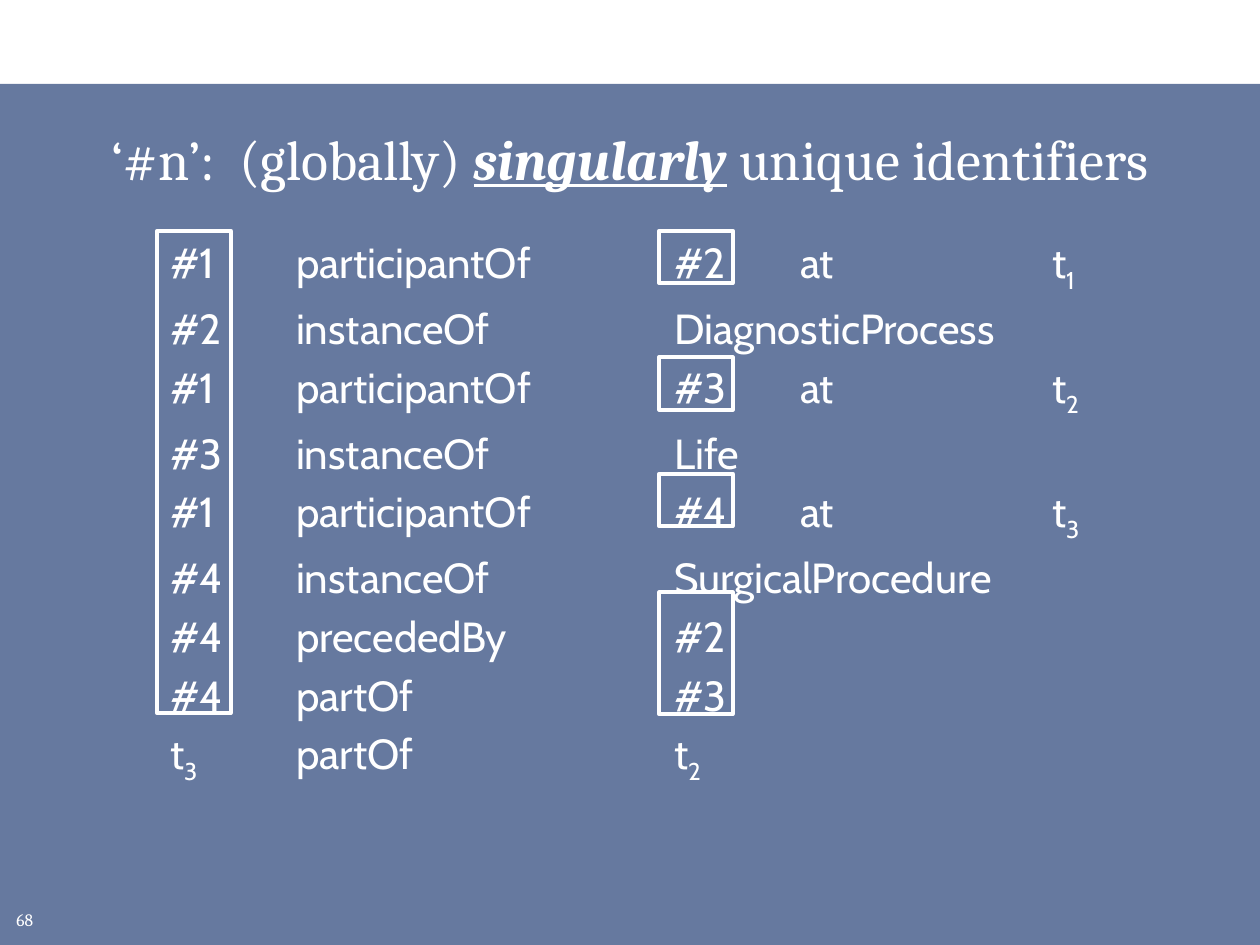
from dataclasses import dataclass

from lxml.etree import SubElement as Sub
from pptx import Presentation
from pptx.dml.color import RGBColor as RGB
from pptx.enum.shapes import MSO_SHAPE as Shape
from pptx.enum.text import MSO_ANCHOR as Anchor, MSO_AUTO_SIZE as Fit, PP_ALIGN as Align
from pptx.oxml.ns import qn
from pptx.util import Cm, Pt


@dataclass(frozen=True)
class Theme:
    white: RGB = RGB(0xFF, 0xFF, 0xFF)
    navy: RGB = RGB(0x00, 0x20, 0x60)
    serif: str = "Cambria"
    sans: str = "Cabin"
    head: int = 32
    body: int = 24
    note: int = 10


THEME = Theme()

# Tab stops of the five columns
STOPS = (2.54, 5.08, 12.7, 15.24, 20.32)

# An underscore marks the subscript that follows
FACTS = (
    ("#1", "participantOf", "#2", "at", "t_1"),
    ("#2", "instanceOf", "DiagnosticProcess"),
    ("#1", "participantOf", "#3", "at", "t_2"),
    ("#3", "instanceOf", "Life"),
    ("#1", "participantOf", "#4", "at", "t_3"),
    ("#4", "instanceOf", "SurgicalProcedure"),
    ("#4", "precededBy", "#2"),
    ("#4", "partOf", "#3"),
    ("t_3", "partOf", "t_2"),
)

# Left, top and height of the frames around identifiers
FRAMES = (
    (3.17, 4.65, 9.73),
    (13.29, 4.65, 1.06),
    (13.29, 7.2, 1.06),
    (13.29, 9.55, 1.06),
    (13.29, 11.94, 2.46),
)


def style(para, face, size):
    font = para.font
    font.name, font.size = face, Pt(size)
    font.color.rgb = THEME.white


def add_rect(slide, x, y, w, h):
    rect = slide.shapes.add_shape(Shape.RECTANGLE, Cm(x), Cm(y), Cm(w), Cm(h))
    rect.shadow.inherit = False
    return rect


def add_band(slide):
    band = add_rect(slide, 0, 1.69, 25.4, 17.36)
    band.fill.solid()
    band.fill.fore_color.rgb = THEME.navy
    band.line.fill.background()
    tone = band._element.spPr.find(".//" + qn("a:srgbClr"))
    Sub(tone, qn("a:alpha"), val="60000")
    # Send the band behind the title
    slide.shapes._spTree.insert(2, band._element)


def add_frame(slide, x, y, h):
    frame = add_rect(slide, x, y, 1.48, h)
    frame.fill.background()
    frame.line.color.rgb = THEME.white
    frame.line.width = Pt(2.25)


def add_box(slide, x, y, w, h):
    box = slide.shapes.add_textbox(Cm(x), Cm(y), Cm(w), Cm(h)).text_frame
    box.word_wrap = True
    return box


def set_title(slide):
    title = slide.shapes.title
    title.left, title.top = Cm(0.64), Cm(2.12)
    title.width, title.height = Cm(24.13), Cm(2.12)
    text = title.text_frame
    text.auto_size, text.vertical_anchor = Fit.NONE, Anchor.MIDDLE
    para = text.paragraphs[0]
    para.alignment = Align.CENTER
    style(para, THEME.serif, THEME.head)
    para.add_run().text = "‘#n’:  (globally) "
    key = para.add_run()
    key.text = "singularly"
    key.font.bold = key.font.italic = key.font.underline = True
    para.add_run().text = " unique identifiers"


def add_cell(para, cell):
    base, _, sub = cell.partition("_")
    para.add_run().text = "\t" + base
    if sub:
        run = para.add_run()
        run.text = sub
        run._r.get_or_add_rPr().set("baseline", "-25000")


def add_facts(slide):
    box = add_box(slide, 0.64, 4.65, 24.55, 7.62)
    for row, cells in enumerate(FACTS):
        para = box.add_paragraph() if row else box.paragraphs[0]
        tabs = Sub(para._p.get_or_add_pPr(), qn("a:tabLst"))
        for stop in STOPS:
            Sub(tabs, qn("a:tab"), pos=str(Cm(stop)), algn="l")
        if row:
            para.space_before = Pt(4.8)
        style(para, THEME.sans, THEME.body)
        for cell in cells:
            add_cell(para, cell)


def add_number(slide):
    box = add_box(slide, 0.08, 18.21, 0.99, 0.64)
    box.vertical_anchor = Anchor.MIDDLE
    para = box.paragraphs[0]
    para.text = "68"
    style(para, THEME.serif, THEME.note)


def main():
    deck = Presentation()
    deck.slide_width, deck.slide_height = Cm(25.4), Cm(19.05)
    slide = deck.slides.add_slide(deck.slide_layouts[5])

    # Backdrop and page number
    add_band(slide)
    add_number(slide)

    # Title, frames and statements
    set_title(slide)
    for frame in FRAMES:
        add_frame(slide, *frame)
    add_facts(slide)

    deck.save("out.pptx")


if __name__ == "__main__":
    main()
